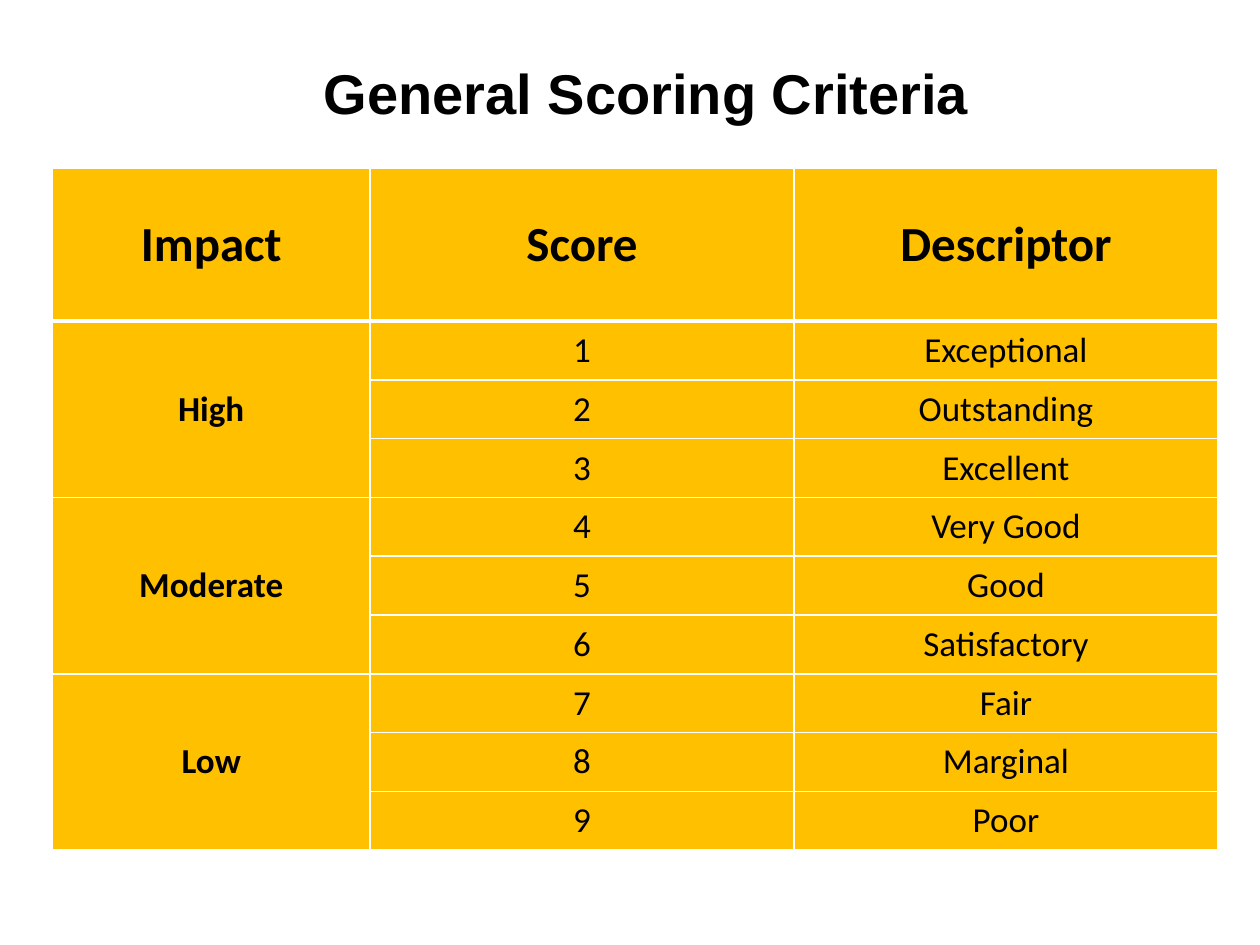
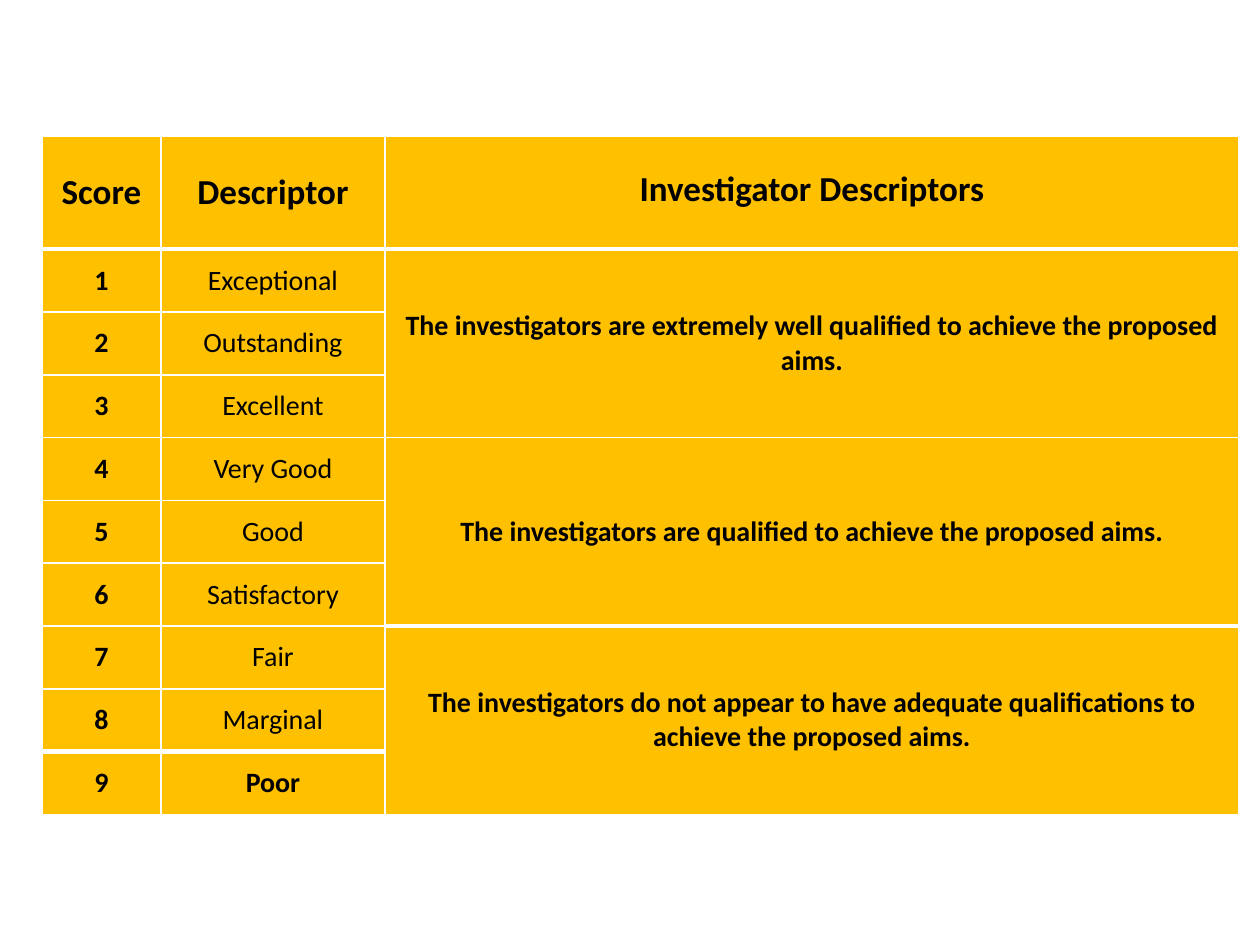
"""Build two slides of scoring tables: general criteria and investigator descriptors."""
import pptx
import pptx.dml.color
import pptx.enum.text
import pptx.util
import lxml.etree

Pt = pptx.util.Pt
ALIGN = pptx.enum.text.PP_ALIGN
ANCHOR = pptx.enum.text.MSO_ANCHOR
BLACK = pptx.dml.color.RGBColor(0x00, 0x00, 0x00)
WHITE = pptx.dml.color.RGBColor(0xFF, 0xFF, 0xFF)
GOLD = pptx.dml.color.RGBColor(0xFF, 0xC0, 0x00)
DRAWING = "http://schemas.openxmlformats.org/drawingml/2006/main"
THIN, THICK = 1, 3
GROUP_SIZE = 3


def write(frame, text, size, font="Calibri", bold=False, align=ALIGN.CENTER):
    para = frame.paragraphs[0]
    para.alignment = align
    span = para.add_run()
    span.text = text
    span.font.size = Pt(size)
    span.font.name = font
    span.font.bold = bold
    span.font.color.rgb = BLACK


def draw_borders(cell, top, bottom):
    properties = cell._tc.get_or_add_tcPr()
    for side, width in (("L", THIN), ("R", THIN), ("T", top), ("B", bottom)):
        line = lxml.etree.SubElement(properties, f"{{{DRAWING}}}ln{side}", w=str(Pt(width)))
        fill = lxml.etree.SubElement(line, f"{{{DRAWING}}}solidFill")
        lxml.etree.SubElement(fill, f"{{{DRAWING}}}srgbClr", val=str(WHITE))


descriptors = ["Exceptional", "Outstanding", "Excellent", "Very Good", "Good",
               "Satisfactory", "Fair", "Marginal", "Poor"]
scores = [str(number) for number in range(1, len(descriptors) + 1)]
impacts = ["High", "Moderate", "Low"]
investigator_notes = [
    "The investigators are extremely well qualified to achieve the proposed aims.",
    "The investigators are qualified to achieve the proposed aims.",
    "The investigators do not appear to have adequate qualifications to achieve the proposed aims.",
]

tables = [
    dict(
        title="General Scoring Criteria", left=30, top=96,
        columns=[("Impact", 181.5, impacts), ("Score", 242.25, scores),
                 ("Descriptor", 242.25, descriptors)],
        header_height=87.5, row_height=33.6, header_size=28, body_size=20,
        plain_columns={1, 2}, accents=set(), header_lift=0,
    ),
    dict(
        title=None, left=24, top=78,
        columns=[("Score", 68, scores), ("Descriptor", 128, descriptors),
                 ("Investigator Descriptors", 488, investigator_notes)],
        header_height=64.4, row_height=35.9, header_size=20, body_size=16,
        plain_columns={1}, accents={(7, 2), (9, 0), (9, 1)}, header_lift=4,
    ),
]

deck = pptx.Presentation()
deck.slide_width, deck.slide_height = Pt(720), Pt(540)

for table in tables:
    page = deck.slides.add_slide(deck.slide_layouts[6])
    columns, accents = table["columns"], table["accents"]
    row_count = len(scores) + 1
    width = sum(column_width for _, column_width, _ in columns)
    height = table["header_height"] + table["row_height"] * len(scores)
    grid = page.shapes.add_table(row_count, len(columns), Pt(table["left"]),
                                 Pt(table["top"]), Pt(width), Pt(height)).table
    grid.first_row = grid.horz_banding = False
    for row in range(row_count):
        grid.rows[row].height = Pt(table["row_height"] if row else table["header_height"])

    for col, (heading, column_width, entries) in enumerate(columns):
        grid.columns[col].width = Pt(column_width)
        step = len(scores) // len(entries)
        texts = {0: heading} | {1 + step * index: entry for index, entry in enumerate(entries)}
        for row in range(row_count):
            cell = grid.cell(row, col)
            cell.margin_left = cell.margin_right = Pt(5)
            cell.margin_top = cell.margin_bottom = 0
            cell.vertical_anchor = ANCHOR.MIDDLE
            top, bottom = (THICK if edge == 1 or (edge, col) in accents else THIN
                           for edge in (row, row + 1))
            draw_borders(cell, top, bottom)
            cell.fill.solid()
            cell.fill.fore_color.rgb = GOLD
            if row in texts:
                bold = row == 0 or col not in table["plain_columns"] or (row, col) in accents
                write(cell.text_frame, texts[row], bold=bold,
                      size=table["body_size"] if row else table["header_size"])
            if row in texts and row and step == GROUP_SIZE:
                cell.merge(grid.cell(row + step - 1, col))
    grid.cell(0, len(columns) - 1).margin_bottom = Pt(table["header_lift"])

    if table["title"]:
        box = page.shapes.add_textbox(Pt(178), Pt(30), Pt(386), Pt(46))
        box.text_frame.word_wrap = False
        box.text_frame.auto_size = pptx.enum.text.MSO_AUTO_SIZE.SHAPE_TO_FIT_TEXT
        write(box.text_frame, table["title"], size=32, font="Arial", bold=True, align=ALIGN.LEFT)

deck.save("out.pptx")
